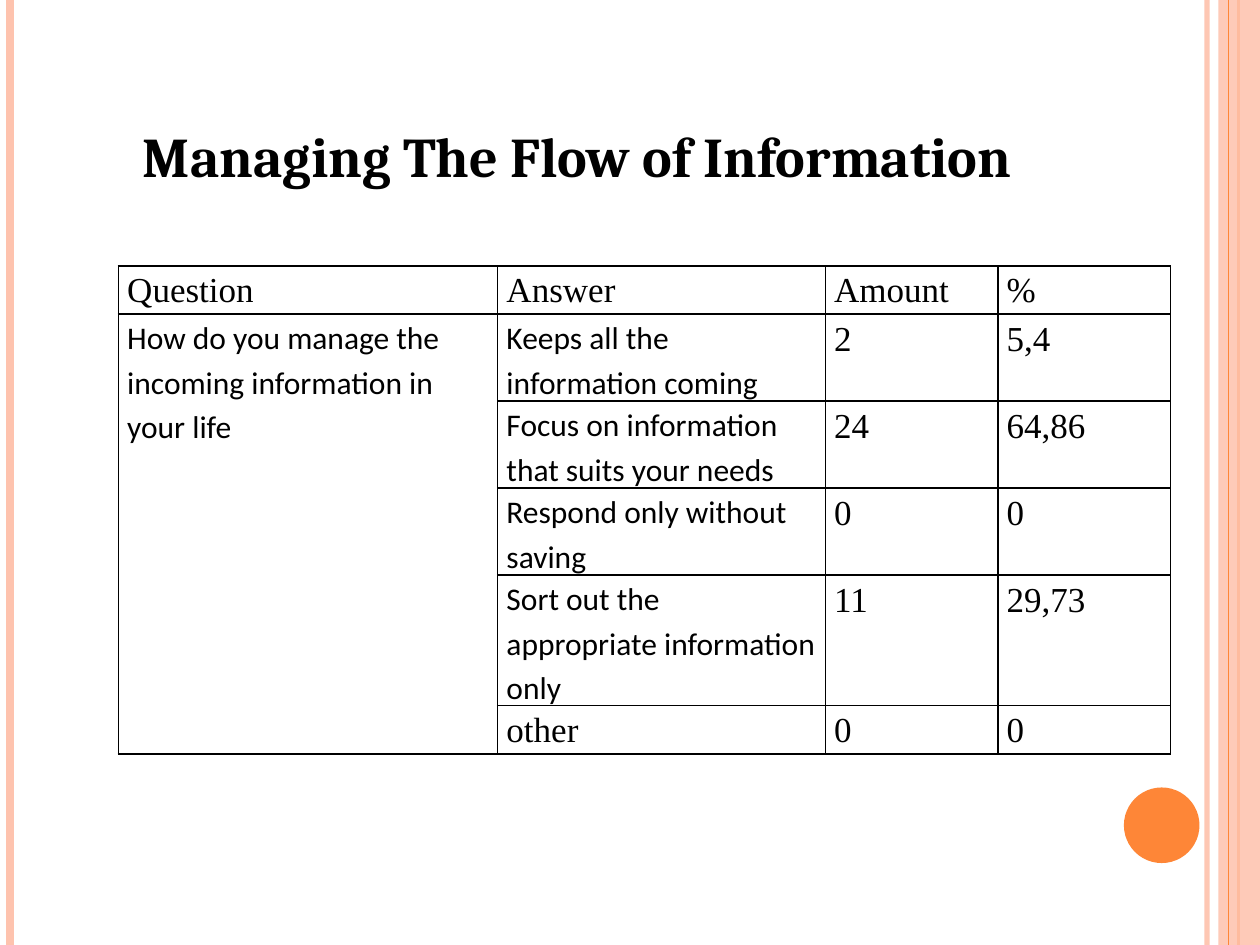
"""Build the slide on managing the flow of information, with its answer table."""
from lxml import etree
from pptx import Presentation
from pptx.dml.color import RGBColor
from pptx.enum.shapes import MSO_CONNECTOR, MSO_SHAPE
from pptx.enum.text import MSO_ANCHOR, PP_ALIGN
from pptx.oxml import parse_xml
from pptx.oxml.ns import nsdecls, qn
from pptx.util import Inches, Pt

STRAIGHT = MSO_CONNECTOR.STRAIGHT
RECT, OVAL = MSO_SHAPE.RECTANGLE, MSO_SHAPE.OVAL
BOTTOM, CENTER = MSO_ANCHOR.BOTTOM, PP_ALIGN.CENTER
BLACK = RGBColor(0x00, 0x00, 0x00)
PEACH = RGBColor(0xFE, 0xC3, 0xAE)
ORANGE = RGBColor(0xFE, 0x86, 0x37)
W, H = Inches(10), Inches(7.5)

TITLE = dict(name="Cambria", size=Pt(32), bold=True)
SERIF = dict(name="Times New Roman", size=Pt(20), bold=False)
SANS = dict(name="Calibri", size=Pt(18), bold=False)


def set_alpha(el, percent):
    for clr in el.iter(qn("a:srgbClr")):
        etree.SubElement(clr, qn("a:alpha")).set("val", str(percent * 1000))


def add_text(tf, text, fmt):
    p = tf.paragraphs[0]
    r = p.add_run()
    r.text = text
    r.font.color.rgb = BLACK
    for key, value in fmt.items():
        setattr(r.font, key, value)
    return p


prs = Presentation()
prs.slide_width, prs.slide_height = W, H
shapes = prs.slides.add_slide(prs.slide_layouts[6]).shapes

rules = [(9.58, PEACH, 3, 93), (0.08, PEACH, 4.5, 100),
         (9.83, ORANGE, 1.5, 100), (9.75, ORANGE, 0.75, 100)]
for x, color, weight, alpha in rules:
    if x == 9.75:
        band = shapes.add_shape(RECT, Inches(9.67), 0, W - Inches(9.67), H)
    s = shapes.add_connector(STRAIGHT, Inches(x), 0, Inches(x), H)
    s.line.color.rgb, s.line.width = color, Pt(weight)
    set_alpha(s.line._ln, alpha)
    etree.SubElement(s._element.spPr, qn("a:effectLst"))

dot = shapes.add_shape(OVAL, Inches(8.92), Inches(6.25), Inches(0.6), Inches(0.6))
for sp, color, alpha in [(band, PEACH, 87), (dot, ORANGE, 100)]:
    sp.shadow.inherit = False
    sp.fill.solid()
    sp.fill.fore_color.rgb = color
    sp.line.fill.background()
    set_alpha(sp._element.spPr, alpha)

tf = shapes.add_textbox(Inches(0.5), Inches(0.3), Inches(8.17), Inches(1.25)).text_frame
tf.word_wrap, tf.vertical_anchor = True, BOTTOM
add_text(tf, "Managing The Flow of Information", TITLE).alignment = CENTER

rows = [
    ("Question", "Answer", "Amount", "%"),
    ("How do you manage the incoming information in your life",
     "Keeps all the information coming", "2", "5,4"),
    ("", "Focus on information that suits your needs", "24", "64,86"),
    ("", "Respond only without saving", "0", "0"),
    ("", "Sort out the appropriate information only", "11", "29,73"),
    ("", "other", "0", "0"),
]
col_widths = [3.01, 2.6, 1.37, 1.37]
table = shapes.add_table(len(rows), len(col_widths), Inches(0.94), Inches(2.11),
                         Inches(8.36), Inches(3.74)).table
table.first_row = table.horz_banding = False
for col, width in zip(table.columns, col_widths):
    col.width = Inches(width)
for row in table.rows:
    row.height = Inches(0.21)
table.cell(1, 0).merge(table.cell(len(rows) - 1, 0))

cell_format = dict(margin_left=Inches(0.07), margin_right=Inches(0.07),
                   margin_top=0, margin_bottom=0)
for i, row in enumerate(rows):
    for j, text in enumerate(row):
        cell = table.cell(i, j)
        for key, value in cell_format.items():
            setattr(cell, key, value)
        tcPr = cell._tc.get_or_add_tcPr()
        for side in ("lnL", "lnR", "lnT", "lnB"):
            tcPr.append(parse_xml(
                f'<a:{side} {nsdecls("a")} w="{Pt(1)}"><a:solidFill>'
                f'<a:srgbClr val="{BLACK}"/></a:solidFill></a:{side}>'))
        cell.fill.background()
        if text:
            sans = 0 < i and j < 2 and text != "other"
            p = add_text(cell.text_frame, text, SANS if sans else SERIF)
            p.line_spacing = 1.15
            p.space_after = Pt(10 if i and j > 1 else 0)

prs.save("out.pptx")
